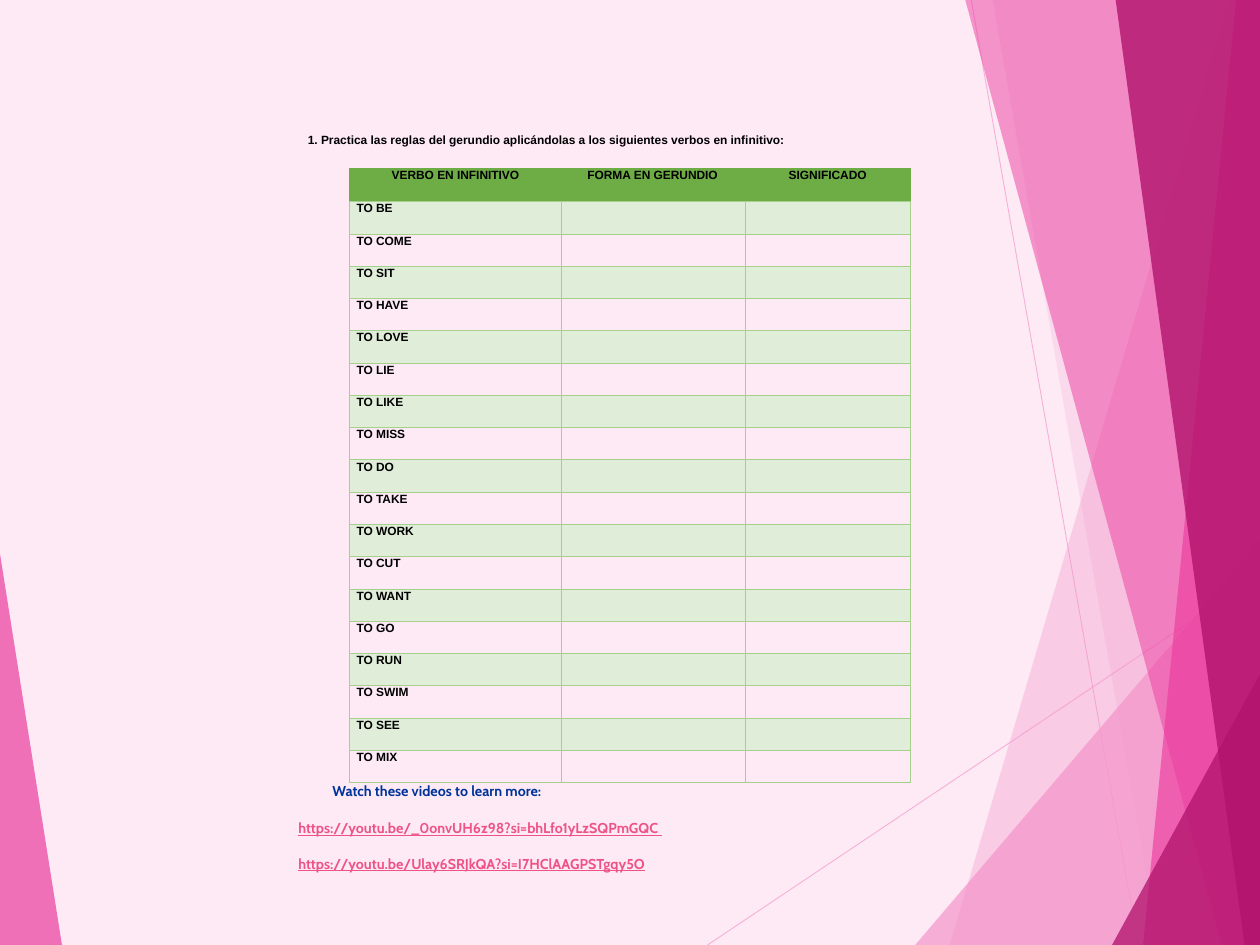
from lxml.etree import SubElement
from pptx import Presentation
from pptx.dml.color import RGBColor
from pptx.enum.shapes import MSO_CONNECTOR
from pptx.enum.text import MSO_ANCHOR, MSO_AUTO_SIZE, PP_ALIGN
from pptx.oxml.ns import qn
from pptx.util import Pt

WIDTH, HEIGHT = 1056, 792
LIGHT_PINK, PINK, MAGENTA = "F496CB", "EB3D9F", "B2136D"
HEADER_GREEN, BAND_GREEN, GRID_GREEN = "6EAC46", "E0EDD9", "A8D08D"


def paint(fill, color, owner=None, opacity=100):
    """Set a solid colour; with an owner shape, also set its opacity in percent."""
    fill.solid()
    fill.fore_color.rgb = RGBColor.from_string(color)
    if owner is not None:
        for rgb in owner.element.iter(qn("a:srgbClr")):
            SubElement(rgb, qn("a:alpha"), val=str(opacity * 1000))


def write(paragraph, text, size=10, font="Arial", color="000000", underline=False,
          indent=0, line_spacing=None, space_before=0):
    properties = paragraph._p.get_or_add_pPr()
    properties.set("marL", str(Pt(indent)))
    properties.set("indent", "0")
    paragraph.alignment = PP_ALIGN.LEFT
    paragraph.space_before = Pt(space_before)
    if line_spacing:
        paragraph.line_spacing = Pt(line_spacing)
    run = paragraph.add_run()
    run.text = text
    run.font.size = Pt(size)
    run.font.name = font
    run.font.bold = True
    run.font.underline = underline
    paint(run.font.fill, color)


prs = Presentation()
prs.slide_width, prs.slide_height = Pt(WIDTH), Pt(HEIGHT)
slide = prs.slides.add_slide(prs.slide_layouts[5])
paint(slide.background.fill, "FDEAF5")

# Facets and thin lines along the slide edges
for x1, y1, x2, y2 in [(593, HEIGHT, WIDTH, 482), (814, 0, 954, HEIGHT)]:
    ray = slide.shapes.add_connector(MSO_CONNECTOR.STRAIGHT, Pt(x1), Pt(y1), Pt(x2), Pt(y2))
    ray.line.width = Pt(0.75)
    paint(ray.line.fill, LIGHT_PINK, ray, 70)
    SubElement(ray.element.spPr, qn("a:effectLst"))

bottom_right, top_right = (WIDTH, HEIGHT), (WIDTH, 0)
facets = [
    (LIGHT_PINK, 36, [(1030, 0), (796, HEIGHT), bottom_right, top_right]),
    (LIGHT_PINK, 20, [(832, 0), (971, HEIGHT), bottom_right, top_right]),
    (LIGHT_PINK, 72, [(767, HEIGHT), (WIDTH, 453), bottom_right]),
    (PINK, 50, [(809, 0), (1024, HEIGHT), bottom_right, top_right]),
    (PINK, 66, [(1036, 0), (958, HEIGHT), bottom_right, top_right]),
    (MAGENTA, 80, [(935, 0), (1043, HEIGHT), bottom_right, top_right]),
    (MAGENTA, 76, [(932, HEIGHT), (WIDTH, 565), bottom_right]),
    (PINK, 70, [(0, 464), (52, HEIGHT), (0, HEIGHT)]),
]
for color, opacity, corners in facets:
    outline = slide.shapes.build_freeform(*corners[0], scale=Pt(1))
    outline.add_line_segments(corners[1:], close=True)
    facet = outline.convert_to_shape()
    facet.shadow.inherit = False
    facet.line.fill.background()
    paint(facet.fill, color, facet, opacity)

# Exercise heading and video links
heading = slide.shapes.title
heading.left, heading.top, heading.width, heading.height = Pt(257), Pt(111), Pt(420), Pt(13)
videos = slide.shapes.add_textbox(Pt(249), Pt(656), Pt(347), Pt(75))
for block in (heading, videos):
    frame = block.text_frame
    frame.word_wrap = True
    frame.auto_size = MSO_AUTO_SIZE.NONE
    frame.vertical_anchor = MSO_ANCHOR.TOP
    frame.margin_left = frame.margin_top = frame.margin_right = frame.margin_bottom = 0

write(heading.text_frame.paragraphs[0],
      "1. Practica las reglas del gerundio aplicándolas a los siguientes verbos en infinitivo:",
      indent=1)
write(videos.text_frame.paragraphs[0], "Watch these videos to learn more:",
      size=12, font="Cabin", color="003399", indent=29.5)
for link, gap in [("https://youtu.be/_0onvUH6z98?si=bhLfo1yLzSQPmGQC ", 1.5),
                  ("https://youtu.be/Ulay6SRJkQA?si=I7HClAAGPSTgqy5O", 0)]:
    write(videos.text_frame.add_paragraph(), link, size=12, font="Cabin", color="EF5285",
          underline=True, indent=1, line_spacing=29.5, space_before=gap)

# Verb table
headers = [("VERBO EN INFINITIVO", 35.3), ("FORMA EN GERUNDIO", 22.3), ("SIGNIFICADO", 36)]
verbs = ["BE", "COME", "SIT", "HAVE", "LOVE", "LIE", "LIKE", "MISS", "DO", "TAKE",
         "WORK", "CUT", "WANT", "GO", "RUN", "SWIM", "SEE", "MIX"]
column_widths = [177, 155, 138]
header_height, verb_height = 28, 27.06
verb_table = slide.shapes.add_table(
    len(verbs) + 1, len(headers), Pt(293), Pt(141), Pt(sum(column_widths)),
    Pt(header_height + verb_height * len(verbs))).table
verb_table.first_row = verb_table.horz_banding = False
for column, width in zip(verb_table.columns, column_widths):
    column.width = Pt(width)

for row_number, row in enumerate(verb_table.rows):
    is_header = row_number == 0
    row.height = Pt(header_height if is_header else verb_height)
    for column_number, cell in enumerate(row.cells):
        cell.margin_left = cell.margin_top = cell.margin_right = cell.margin_bottom = 0
        cell.vertical_anchor = MSO_ANCHOR.TOP
        if is_header:
            paint(cell.fill, HEADER_GREEN)
        elif row_number % 2:
            paint(cell.fill, BAND_GREEN)
        else:
            cell.fill.background()

        cell_properties = cell._tc.get_or_add_tcPr()
        for position, side in enumerate(("lnL", "lnR", "lnT", "lnB")):
            border = SubElement(cell_properties, qn(f"a:{side}"), w=str(Pt(0.5)))
            border_fill = SubElement(border, qn("a:solidFill"))
            SubElement(border_fill, qn("a:srgbClr"),
                       val=HEADER_GREEN if is_header else GRID_GREEN)
            cell_properties.insert(position, border)

        paragraph = cell.text_frame.paragraphs[0]
        if is_header:
            label, indent = headers[column_number]
            write(paragraph, label, indent=indent, line_spacing=11.6)
        elif column_number == 0:
            write(paragraph, f"TO {verbs[row_number - 1]}", indent=5.8, line_spacing=11.6)

prs.save("out.pptx")
